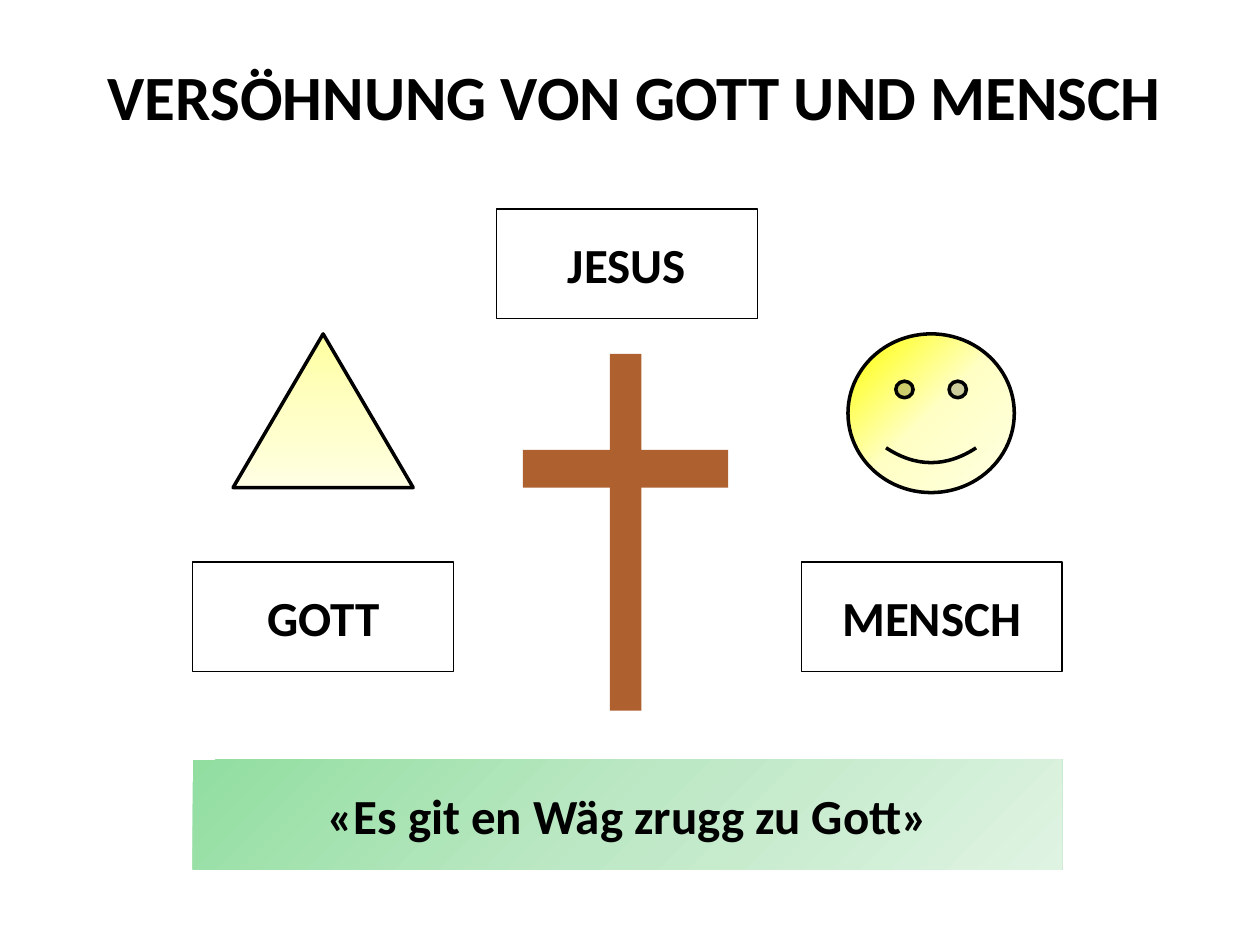
"""Builds the slide on the reconciliation of God and man."""
from copy import deepcopy

from lxml import etree
from pptx import Presentation
from pptx import util as u
from pptx.dml import color
from pptx.enum import shapes, text
from pptx.oxml import ns

COLORS = {
    "ink": "000000", "paper": "FFFFFF", "wood": "AF602F",
    "sun": "FFFF00", "lemon": "FFFFA0", "cream": "FFFFC5", "ivory": "FFFFE3",
    "green": "91DEA0", "mint": "BDE8C5", "mist": "DFF3E3",
}
KIND = shapes.MSO_SHAPE


class Board:
    """Holds the style and the current slide."""

    def __init__(self, page, font="Calibri"):
        self.page = page
        self.font = font

    def rgb(self, name):
        return color.RGBColor.from_string(COLORS[name])

    def shape(self, kind, place, fill=None, line=None):
        shape = self.page.shapes.add_shape(kind, *map(u.Inches, place))
        shape.shadow.inherit = False
        if fill:
            shape.fill.solid()
            shape.fill.fore_color.rgb = self.rgb(fill)
        else:
            shape.fill.background()
        if line:
            shape.line.color.rgb = self.rgb("ink")
            shape.line.width = u.Pt(line)
        else:
            shape.line.fill.background()
        return shape

    def gradient(self, shape, names, angle):
        shape.fill.gradient()
        shape.fill.gradient_angle = 360 - angle
        stops = shape._element.spPr.find(f".//{ns.qn('a:gsLst')}")
        stops.append(deepcopy(stops[-1]))
        for stop, name, position in zip(shape.fill.gradient_stops, names, (0, 0.5, 1)):
            stop.color.rgb = self.rgb(name)
            stop.position = position

    def opacity(self, shape, percent):
        fill = shape._element.spPr.find(f"{ns.qn('a:solidFill')}/{ns.qn('a:srgbClr')}")
        etree.SubElement(fill, ns.qn("a:alpha"), val=str(percent * 1000))

    def caption(self, shape, words, size):
        frame = shape.text_frame
        frame.word_wrap = True
        frame.vertical_anchor = text.MSO_ANCHOR.MIDDLE
        para = frame.paragraphs[0]
        para.alignment = text.PP_ALIGN.CENTER
        span = para.add_run()
        span.text = words
        span.font.name = self.font
        span.font.size = u.Pt(size)
        span.font.bold = True
        span.font.color.rgb = self.rgb("ink")

    def title(self, words, place):
        box = self.shape(KIND.RECTANGLE, place, fill="paper")
        self.opacity(box, 60)
        self.caption(box, words, 36)

    def label(self, words, left, top, width=2.07, line=0.75):
        box = self.shape(KIND.RECTANGLE, (left, top, width, 0.87), line=line)
        self.caption(box, words, 28)
        frame = box.text_frame
        frame.margin_top = frame.margin_bottom = u.Inches(0.2)
        frame.auto_size = text.MSO_AUTO_SIZE.SHAPE_TO_FIT_TEXT
        return box

    def symbol(self, kind, place, names, angle):
        self.gradient(self.shape(kind, place, line=2), names, angle)

    def cross(self, *beams):
        for beam in beams:
            self.shape(KIND.RECTANGLE, beam, fill="wood")


def main():
    deck = Presentation()
    deck.slide_width, deck.slide_height = u.Inches(10), u.Inches(7.5)
    board = Board(deck.slides.add_slide(deck.slide_layouts[6]))

    board.title("VERSÖHNUNG VON GOTT UND MENSCH", (0.43, 0.44, 9.21, 0.63))
    board.label("GOTT", 1.53, 4.46)
    board.symbol(KIND.ISOSCELES_TRIANGLE, (1.85, 2.65, 1.43, 1.22),
                 ("lemon", "cream", "ivory"), 90)
    board.symbol(KIND.SMILEY_FACE, (6.73, 2.65, 1.32, 1.26),
                 ("sun", "cream", "ivory"), 45)
    board.label("MENSCH", 6.36, 4.46)
    board.label("JESUS", 3.94, 1.66)
    banner = board.label("«Es git en Wäg zrugg zu Gott»", 1.53, 6.03, 6.9, line=None)
    board.gradient(banner, ("green", "mint", "mist"), 45)
    board.cross((4.84, 2.81, 0.25, 2.83), (4.15, 3.57, 1.63, 0.3))

    deck.save("out.pptx")


if __name__ == "__main__":
    main()
